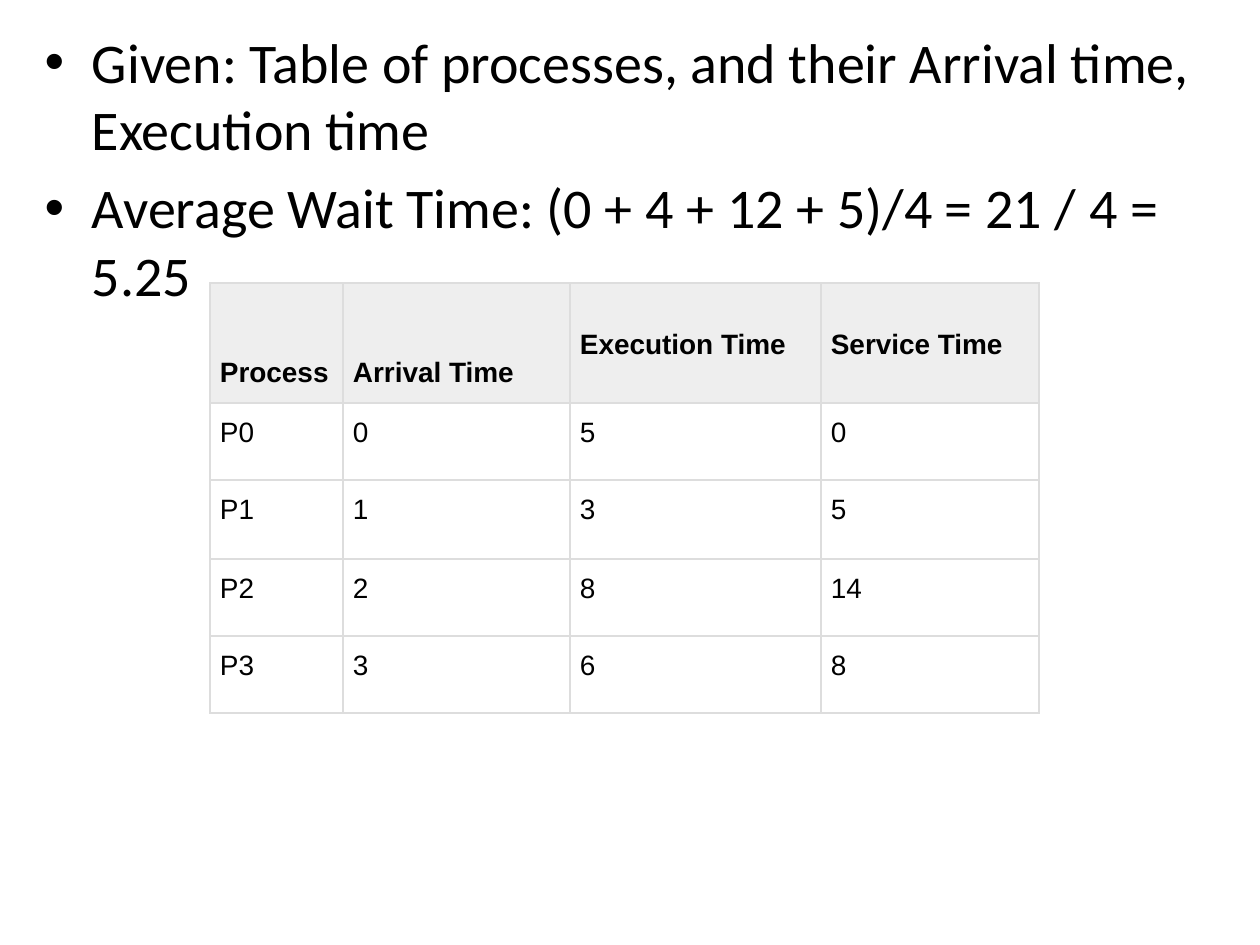
"""Build a slide with a process scheduling table and its average wait time."""
from lxml import etree
from pptx import Presentation
from pptx import util as u
from pptx.dml.color import RGBColor
from pptx.enum import text
from pptx.oxml import ns

PX = 914400 / 126
BLACK = RGBColor(0x00, 0x00, 0x00)
HEADER_GRAY = RGBColor(0xEE, 0xEE, 0xEE)
BORDER_GRAY = RGBColor(0xDD, 0xDD, 0xDD)

BULLETS = [
    "Given: Table of processes, and their Arrival time, Execution time",
    "Average Wait Time: (0 + 4 + 12 + 5)/4 = 21 / 4 = 5.25",
]
PROCESSES = [
    ("Process", "Arrival Time", "Execution Time", "Service Time"),
    ("P0", "0", "5", "0"),
    ("P1", "1", "3", "5"),
    ("P2", "2", "8", "14"),
    ("P3", "3", "6", "8"),
]
COLUMN_WIDTHS = (133, 227, 251, 218)
ROW_HEIGHTS = (120, 77, 79, 77, 77)
CELL_MARGIN = 10
LOW_HEADER_MARGIN = 15


def px(length):
    return u.Emu(round(length * PX))


def write(paragraph, content, font="Arial", size=16, bold=False,
          before=0, after=0, spacing=1.0):
    paragraph.space_before = u.Pt(before)
    paragraph.space_after = u.Pt(after)
    paragraph.line_spacing = spacing
    run = paragraph.add_run()
    run.text = content
    run.font.name = font
    run.font.size = u.Pt(size)
    run.font.bold = bold
    run.font.color.rgb = BLACK


def add_bullets(slide, items, left, top, width, height):
    body = slide.placeholders[1]
    body.left, body.top = px(left), px(top)
    body.width, body.height = px(width), px(height)
    frame = body.text_frame
    frame.auto_size = text.MSO_AUTO_SIZE.NONE
    for index, item in enumerate(items):
        paragraph = frame.add_paragraph() if index else frame.paragraphs[0]
        write(paragraph, item, font="Calibri", size=32, before=6.4)


def set_borders(cell, color, width):
    properties = cell._tc.get_or_add_tcPr()
    for side in ("lnL", "lnR", "lnT", "lnB"):
        line = etree.SubElement(properties, ns.qn(f"a:{side}"), w=str(u.Pt(width)))
        fill = etree.SubElement(line, ns.qn("a:solidFill"))
        etree.SubElement(fill, ns.qn("a:srgbClr"), val=str(color))


def format_cell(cell, content, row, column):
    header = row == 0
    cell.margin_left = cell.margin_right = px(CELL_MARGIN)
    cell.margin_top = cell.margin_bottom = px(CELL_MARGIN)
    cell.vertical_anchor = text.MSO_ANCHOR.MIDDLE if header else text.MSO_ANCHOR.TOP
    if header and column < 2:
        cell.vertical_anchor = text.MSO_ANCHOR.BOTTOM
        cell.margin_bottom = px(LOW_HEADER_MARGIN)
    set_borders(cell, BORDER_GRAY, 1)
    if header:
        cell.fill.solid()
        cell.fill.fore_color.rgb = HEADER_GRAY
    else:
        cell.fill.background()
    write(cell.text_frame.paragraphs[0], content, bold=header, after=15, spacing=1.15)


def add_process_table(slide, rows, left, top):
    frame = slide.shapes.add_table(
        len(rows), len(rows[0]), px(left), px(top),
        px(sum(COLUMN_WIDTHS)), px(sum(ROW_HEIGHTS)))
    table = frame.table
    table.horz_banding = False
    for column, width in zip(table.columns, COLUMN_WIDTHS):
        column.width = px(width)
    for row, height in zip(table.rows, ROW_HEIGHTS):
        row.height = px(height)
    for row, values in enumerate(rows):
        for column, value in enumerate(values):
            format_cell(table.cell(row, column), value, row, column)


def main():
    presentation = Presentation()
    presentation.slide_width, presentation.slide_height = px(1260), px(945)
    slide = presentation.slides.add_slide(presentation.slide_layouts[1])
    title = slide.shapes.title.element
    title.getparent().remove(title)
    add_bullets(slide, BULLETS, 32, 21, 1197, 882)
    add_process_table(slide, PROCESSES, 210, 283)
    presentation.save("out.pptx")


if __name__ == "__main__":
    main()
